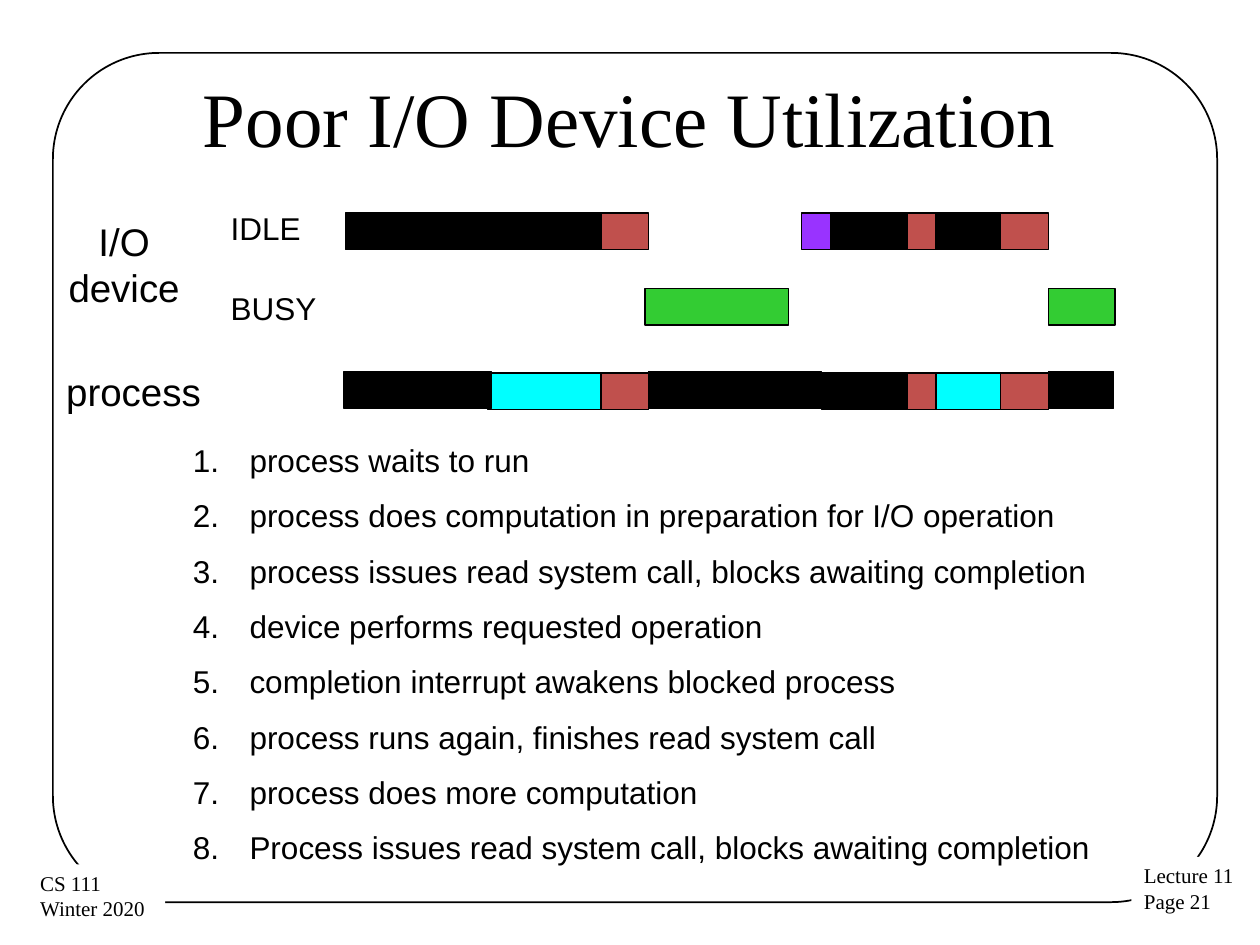
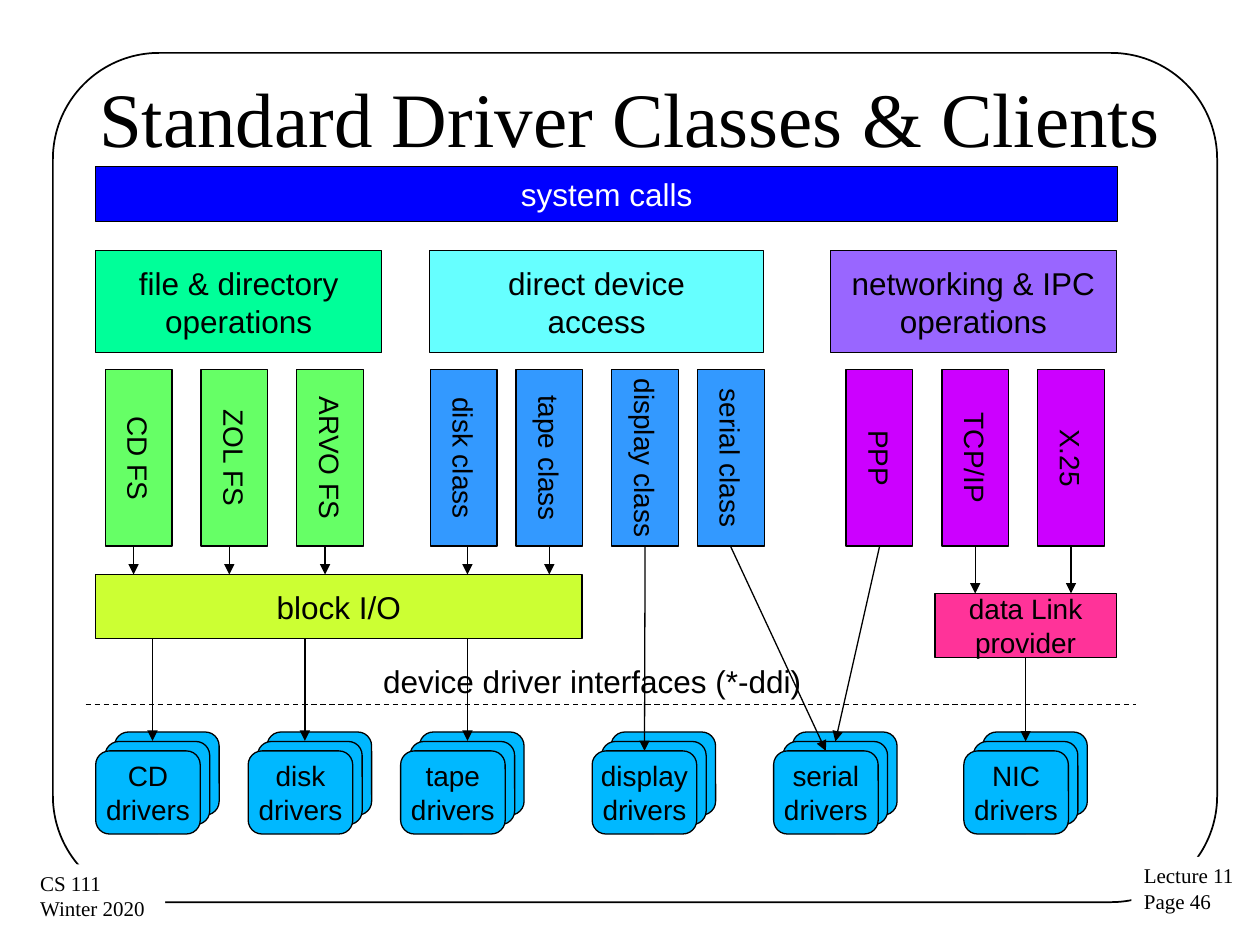
from dataclasses import dataclass

from lxml.etree import SubElement
from pptx import Presentation
from pptx.dml.color import RGBColor
from pptx.enum.dml import MSO_LINE_DASH_STYLE as DASH
from pptx.enum.shapes import MSO_CONNECTOR, MSO_SHAPE
from pptx.enum.text import MSO_ANCHOR as ANCHOR, PP_ALIGN as ALIGN
from pptx.oxml.ns import qn
from pptx.util import Inches, Pt


@dataclass(frozen=True)
class Theme:
    serif: str = "Times New Roman"
    sans: str = "Arial"
    title: int = 44
    row_label: int = 22
    body: int = 18
    small: int = 16
    corner: int = 12
    black: str = "000000"
    white: str = "FFFFFF"
    red: str = "C0504D"
    green: str = "33CC33"
    cyan: str = "00FFFF"
    purple: str = "9933FF"
    blue: str = "0000FF"
    mint: str = "00FF99"
    aqua: str = "66FFFF"
    violet: str = "9966FF"
    light_green: str = "66FF66"
    sky: str = "3399FF"
    magenta: str = "CC00FF"
    lime: str = "CCFF33"
    pink: str = "FF3399"
    driver: str = "00B8FF"


T = Theme()


def write(frame, text, size, font=T.sans, color=T.black, align=ALIGN.LEFT,
          anchor=ANCHOR.TOP, wrap=True, margins=(0.09, 0.04)):
    frame.text = text
    frame.word_wrap = wrap
    frame.vertical_anchor = anchor
    frame.margin_left = frame.margin_right = Inches(margins[0])
    frame.margin_top = frame.margin_bottom = Inches(margins[1])
    for paragraph in frame.paragraphs:
        paragraph.alignment = align
        for run in paragraph.runs:
            run.font.name = font
            run.font.size = Pt(size)
            run.font.color.rgb = RGBColor.from_string(color)


def add_block(slide, area, fill=None, outline=0.75, kind=MSO_SHAPE.RECTANGLE,
              text="", size=T.body, color=T.black):
    """Add a flat shape; a fill of None or an outline of 0 leaves that part out."""
    block = slide.shapes.add_shape(kind, *map(Inches, area))
    block.shadow.inherit = False
    if fill:
        block.fill.solid()
        block.fill.fore_color.rgb = RGBColor.from_string(fill)
    else:
        block.fill.background()
    if outline:
        block.line.color.rgb = RGBColor.from_string(T.black)
        block.line.width = Pt(outline)
    else:
        block.line.fill.background()
    if text:
        write(block.text_frame, text, size, color=color, align=ALIGN.CENTER,
              anchor=ANCHOR.MIDDLE, wrap=False)
    return block


prs = Presentation()
prs.slide_width, prs.slide_height = Inches(10), Inches(7.5)

# Shared frame, corner labels and title
slides = []
for title, page in (("Poor I/O Device Utilization", 21),
                    ("Standard Driver Classes & Clients", 46)):
    slide = prs.slides.add_slide(prs.slide_layouts[5])
    slides.append(slide)
    frame = add_block(slide, (0.42, 0.42, 9.24, 6.74), outline=1,
                      kind=MSO_SHAPE.ROUNDED_RECTANGLE)
    frame.adjustments[0] = 0.125
    for area, label in (((8.98, 6.8, 0.92, 0.51), f"Lecture 11\nPage {page}"),
                        ((0.22, 6.86, 1.09, 0.51), "CS 111\nWinter 2020")):
        corner = add_block(slide, area, T.white, outline=0)
        write(corner.text_frame, label, T.corner, T.serif, wrap=False, margins=(0.1, 0.05))
    heading = slide.shapes.title
    heading.left, heading.top = Inches(0.5), Inches(0.3)
    heading.width, heading.height = Inches(9), Inches(1.25)
    write(heading.text_frame, title, T.title, T.serif, align=ALIGN.CENTER,
          anchor=ANCHOR.MIDDLE, margins=(0.1, 0.05))

utilization, drivers = slides

# Device and process timelines: top of each row, then (left, width, colour)
timelines = (
    (1.69, ((3.87, 0.9, T.black), (2.74, 1.17, T.black), (4.77, 0.38, T.red),
            (6.36, 0.23, T.purple), (7.42, 0.53, T.black), (6.59, 0.61, T.black),
            (7.2, 0.23, T.red), (7.94, 0.38, T.red))),
    (2.29, ((5.12, 1.14, T.green), (8.32, 0.53, T.green))),
    (2.96, ((3.87, 0.9, T.cyan), (4.77, 0.38, T.red), (7.42, 0.53, T.cyan),
            (6.52, 0.68, T.black), (7.2, 0.23, T.red), (7.94, 0.38, T.red))),
    (2.95, ((2.73, 1.17, T.black), (5.15, 1.14, T.black), (6.29, 0.23, T.black),
            (8.32, 0.52, T.black))),
)
for top, spans in timelines:
    for left, width, color in spans:
        add_block(utilization, (left, top, width, 0.29), color)

for area, label, size, align in (
    ((1.74, 1.62, 0.91, 0.39), "IDLE", T.body, ALIGN.LEFT),
    ((1.74, 2.25, 0.91, 0.39), "BUSY", T.body, ALIGN.LEFT),
    ((0.38, 1.69, 1.21, 0.83), "I/O device", T.row_label, ALIGN.CENTER),
    ((0.38, 2.88, 1.36, 0.46), "process", T.row_label, ALIGN.CENTER),
):
    caption = utilization.shapes.add_textbox(*map(Inches, area))
    write(caption.text_frame, label, size, align=align)

steps = (
    "process waits to run",
    "process does computation in preparation for I/O operation",
    "process issues read system call, blocks awaiting completion",
    "device performs requested operation",
    "completion interrupt awakens blocked process",
    "process runs again, finishes read system call",
    "process does more computation",
    "Process issues read system call, blocks awaiting completion",
)
step_list = utilization.shapes.add_textbox(*map(Inches, (1.44, 3.46, 7.42, 3.57)))
write(step_list.text_frame, "\n".join(steps), T.body)
for number, paragraph in enumerate(step_list.text_frame.paragraphs):
    paragraph.space_before = Pt(10 if number else 0)
    properties = paragraph._p.get_or_add_pPr()
    properties.set("marL", str(Inches(0.45)))
    properties.set("indent", str(-Inches(0.45)))
    SubElement(properties, qn("a:buAutoNum"), type="arabicPeriod")

# Driver stacks: three cards each, the front one labelled
stacks = {}
for name, left in (("CD", 0.76), ("disk", 1.97), ("tape", 3.18),
                   ("display", 4.7), ("serial", 6.14), ("NIC", 7.65)):
    for depth in (2, 1, 0):
        shift = 0.15 * depth / 2
        card = add_block(drivers, (left + shift, 5.96 - shift, 0.83, 0.66), T.driver,
                         kind=MSO_SHAPE.ROUNDED_RECTANGLE,
                         text="" if depth else f"{name}\ndrivers", size=T.small)
        stacks[name, depth] = card

# Client layers
add_block(drivers, (0.76, 1.32, 8.11, 0.44), T.blue, text="system calls", color=T.white)
for left, width, color, text in (
    (0.76, 2.27, T.mint, "file & directory\noperations"),
    (3.41, 2.65, T.aqua, "direct device\naccess"),
    (6.59, 2.27, T.violet, "networking & IPC\noperations"),
):
    add_block(drivers, (left, 1.99, width, 0.81), color, text=text)
add_block(drivers, (0.76, 4.56, 3.86, 0.51), T.lime, text="block I/O")
data_link = add_block(drivers, (7.42, 4.71, 1.44, 0.51), T.pink,
                      text="data Link\nprovider", size=T.small)

# Links: start, end, (shape, side) joined at the start, the same at the end
links = [
    ((1.21, 5.07), (1.21, 5.88), None, None),
    ((2.42, 5.07), (2.42, 5.88), None, None),
    ((3.71, 5.07), (3.71, 5.88), None, None),
    ((8.14, 5.22), (8.14, 5.88), (data_link, 2), (stacks["NIC", 1], 0)),
]

# Driver classes: name, centre, start of the arrow, its end, the card it joins
for color, classes in (
    (T.light_green, (("CD FS", 1.1, 1.06, (1.06, 4.56), None),
                     ("ZOL FS", 1.86, 1.82, (1.82, 4.56), None),
                     ("ARVO FS", 2.62, 2.58, (2.58, 4.56), None))),
    (T.sky, (("disk class", 3.68, 3.71, (3.71, 4.56), None),
             ("tape class", 4.36, 4.36, (4.36, 4.56), None),
             ("display class", 5.12, 5.12, (5.11, 5.96), ("display", 0)),
             ("serial class", 5.8, 5.8, (6.55, 5.96), ("serial", 0)))),
    (T.magenta, (("PPP", 6.98, 6.98, (6.63, 5.88), ("serial", 1)),
                 ("TCP/IP", 7.74, 7.74, (7.74, 4.71), None),
                 ("X.25", 8.5, 8.5, (8.5, 4.71), None))),
):
    for name, center, drop, end, card in classes:
        driver_class = add_block(drivers, (center - 0.7, 3.37, 1.4, 0.53), color,
                                 text=name, size=T.small)
        driver_class.rotation = 90
        # The right side of the turned block faces down
        source = (driver_class, 3) if drop == center else None
        links.append(((drop, 4.34), end, source, (stacks[card], 0) if card else None))

interface_label = drivers.shapes.add_textbox(*map(Inches, (2.95, 5.21, 3.64, 0.39)))
write(interface_label.text_frame, "device driver interfaces (*-ddi)", T.body)

interface_line = ((0.68, 5.59), (9.02, 5.59), None, None)
for link in [interface_line, *links]:
    start, end, source, target = link
    line = drivers.shapes.add_connector(MSO_CONNECTOR.STRAIGHT, *map(Inches, start + end))
    if source:
        line.begin_connect(*source)
        line.begin_x, line.begin_y = map(Inches, start)
    if target:
        line.end_connect(*target)
    line.line.color.rgb = RGBColor.from_string(T.black)
    line.line.width = Pt(0.75)
    properties = line._element.spPr
    if link is interface_line:
        line.line.dash_style = DASH.DASH
    else:
        SubElement(properties.find(qn("a:ln")), qn("a:tailEnd"), type="triangle")
    SubElement(properties, qn("a:effectLst"))

prs.save("out.pptx")
